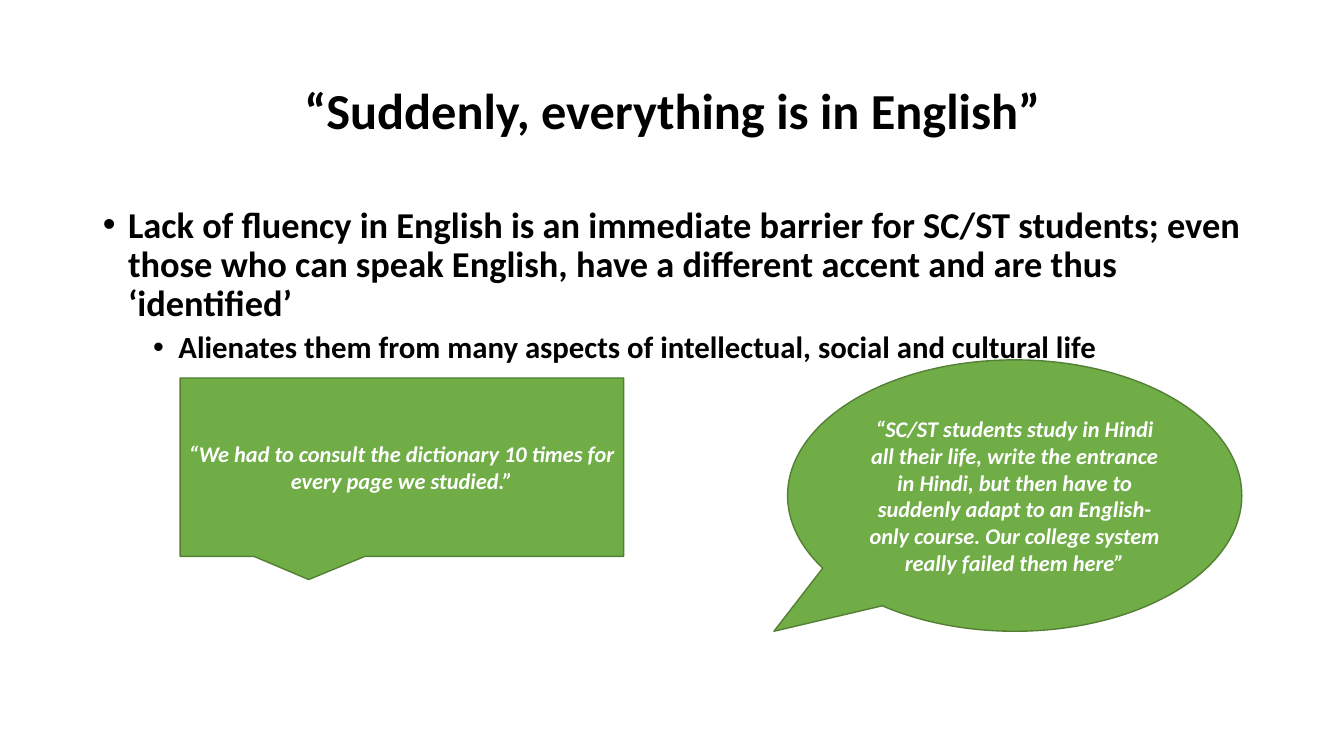
from lxml.etree import SubElement
from pptx import Presentation
from pptx.dml.color import RGBColor
from pptx.enum.shapes import MSO_SHAPE
from pptx.enum.text import MSO_ANCHOR, MSO_AUTO_SIZE, PP_ALIGN
from pptx.oxml.ns import qn
from pptx.util import Inches, Pt


def color(hex_value):
    return RGBColor.from_string(hex_value)


class SlideBuilder:
    FONT = "Calibri"
    INK, PAPER = "000000", "FFFFFF"
    FILL, OUTLINE = "70AD47", "538035"
    BULLET_STYLES = [(26, 0.25, 0), (22, 0.75, 5)]

    def __init__(self, presentation):
        self.width = presentation.slide_width
        self.height = presentation.slide_height
        self.slide = presentation.slides.add_slide(presentation.slide_layouts[1])

    def place(self, element, left, top, width, height):
        element.left, element.width = (round(self.width * share) for share in (left, width))
        element.top, element.height = (round(self.height * share) for share in (top, height))

    def prepare(self, element, anchor):
        frame = element.text_frame
        frame.word_wrap = True
        frame.auto_size = MSO_AUTO_SIZE.NONE
        frame.vertical_anchor = anchor
        return frame

    def format(self, paragraph, size, ink, italic=False):
        font = paragraph.font
        font.name, font.size = self.FONT, Pt(size)
        font.bold, font.italic = True, italic
        font.color.rgb = color(ink)

    def title(self, text, area):
        heading = self.slide.shapes.title
        self.place(heading, *area)
        frame = self.prepare(heading, MSO_ANCHOR.MIDDLE)
        frame.text = text
        paragraph = frame.paragraphs[0]
        paragraph.alignment = PP_ALIGN.CENTER
        paragraph.line_spacing = 0.9
        self.format(paragraph, 36, self.INK)

    def bullets(self, points, area):
        body = self.slide.placeholders[1]
        self.place(body, *area)
        frame = self.prepare(body, MSO_ANCHOR.TOP)
        frame.text = "\n".join(text for text, level in points)
        for paragraph, (text, level) in zip(frame.paragraphs, points):
            size, margin, space = self.BULLET_STYLES[level]
            paragraph.level = level
            paragraph.line_spacing = 0.9
            paragraph.space_before = Pt(space)
            properties = paragraph._p.get_or_add_pPr()
            properties.set("marL", str(Inches(margin)))
            properties.set("indent", str(Inches(-0.25)))
            SubElement(properties, qn("a:buFont"), typeface="Arial")
            SubElement(properties, qn("a:buChar"), char="•")
            self.format(paragraph, size, self.INK)

    def quote(self, text, outline, area, tip):
        bubble = self.slide.shapes.add_shape(outline, 0, 0, 0, 0)
        self.place(bubble, *area)
        bubble.adjustments[0], bubble.adjustments[1] = tip
        bubble.shadow.inherit = False
        bubble.fill.solid()
        bubble.fill.fore_color.rgb = color(self.FILL)
        bubble.line.color.rgb = color(self.OUTLINE)
        bubble.line.width = Pt(1)
        frame = self.prepare(bubble, MSO_ANCHOR.MIDDLE)
        frame.margin_left = frame.margin_right = Inches(0.08)
        frame.text = text
        frame.paragraphs[0].alignment = PP_ALIGN.CENTER
        self.format(frame.paragraphs[0], 16, self.PAPER, italic=True)


def main():
    presentation = Presentation()
    presentation.slide_width = Inches(13.33)
    presentation.slide_height = Inches(7.5)

    builder = SlideBuilder(presentation)
    margin, content_width = 0.069, 0.863
    builder.title("“Suddenly, everything is in English”", (margin, 0.053, content_width, 0.193))
    builder.bullets(
        [
            ("Lack of fluency in English is an immediate barrier for SC/ST students; "
             "even those who can speak English, have a different accent and are thus ‘identified’", 0),
            ("Alienates them from many aspects of intellectual, social and cultural life", 1),
        ],
        (margin, 0.267, content_width, 0.635),
    )
    builder.quote(
        "“SC/ST students study in Hindi all their life, write the entrance in Hindi, "
        "but then have to suddenly adapt to an English-only course. "
        "Our college system really failed them here”",
        MSO_SHAPE.OVAL_CALLOUT, (0.586, 0.476, 0.338, 0.359), (-0.53, 0.5),
    )
    builder.quote(
        "“We had to consult the dictionary 10 times for every page we studied.”",
        MSO_SHAPE.RECTANGULAR_CALLOUT, (0.134, 0.5, 0.33, 0.236), (-0.21, 0.63),
    )
    presentation.save("out.pptx")


if __name__ == "__main__":
    main()
